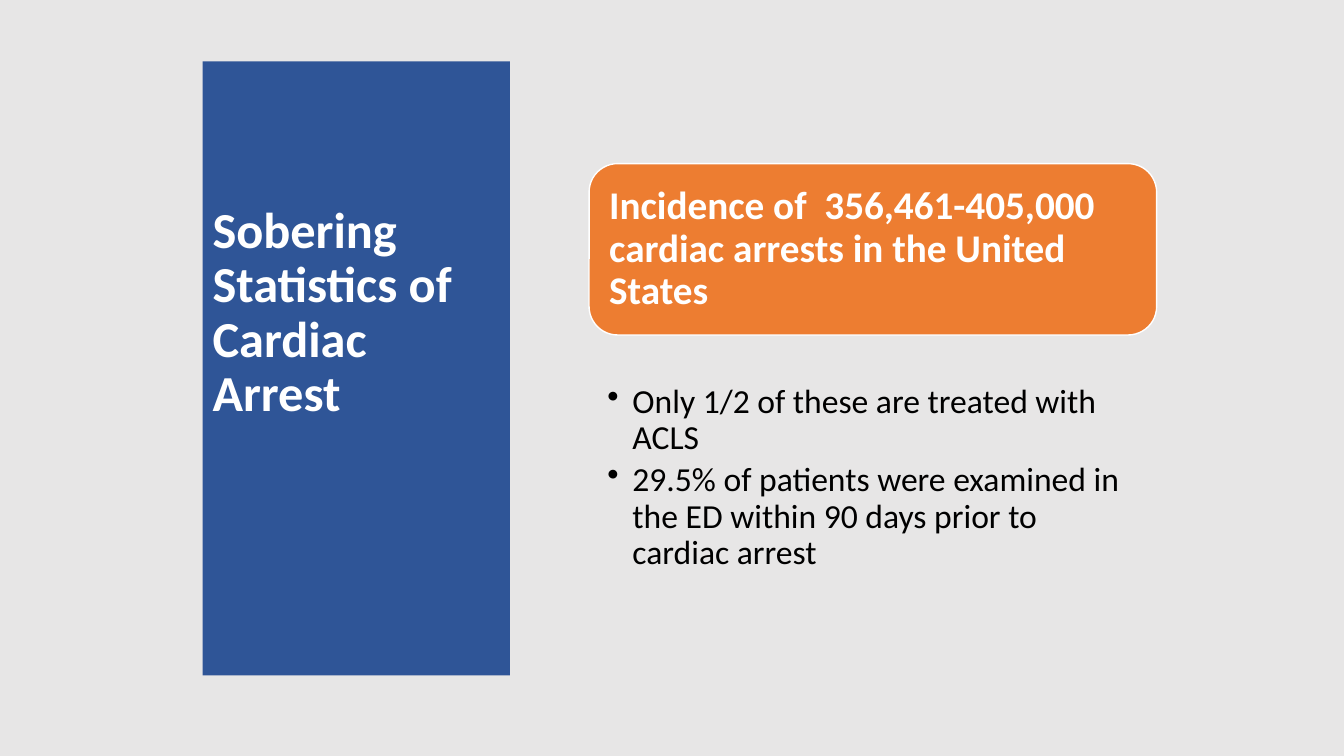
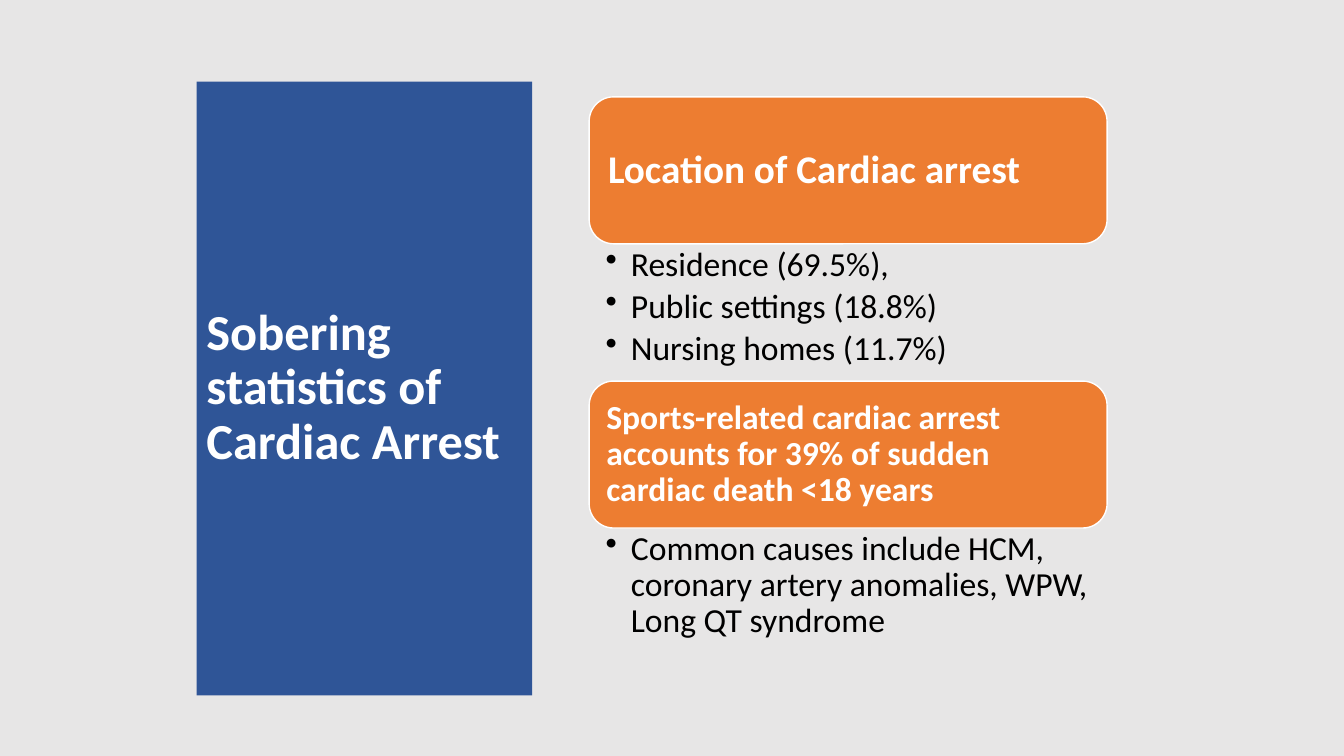
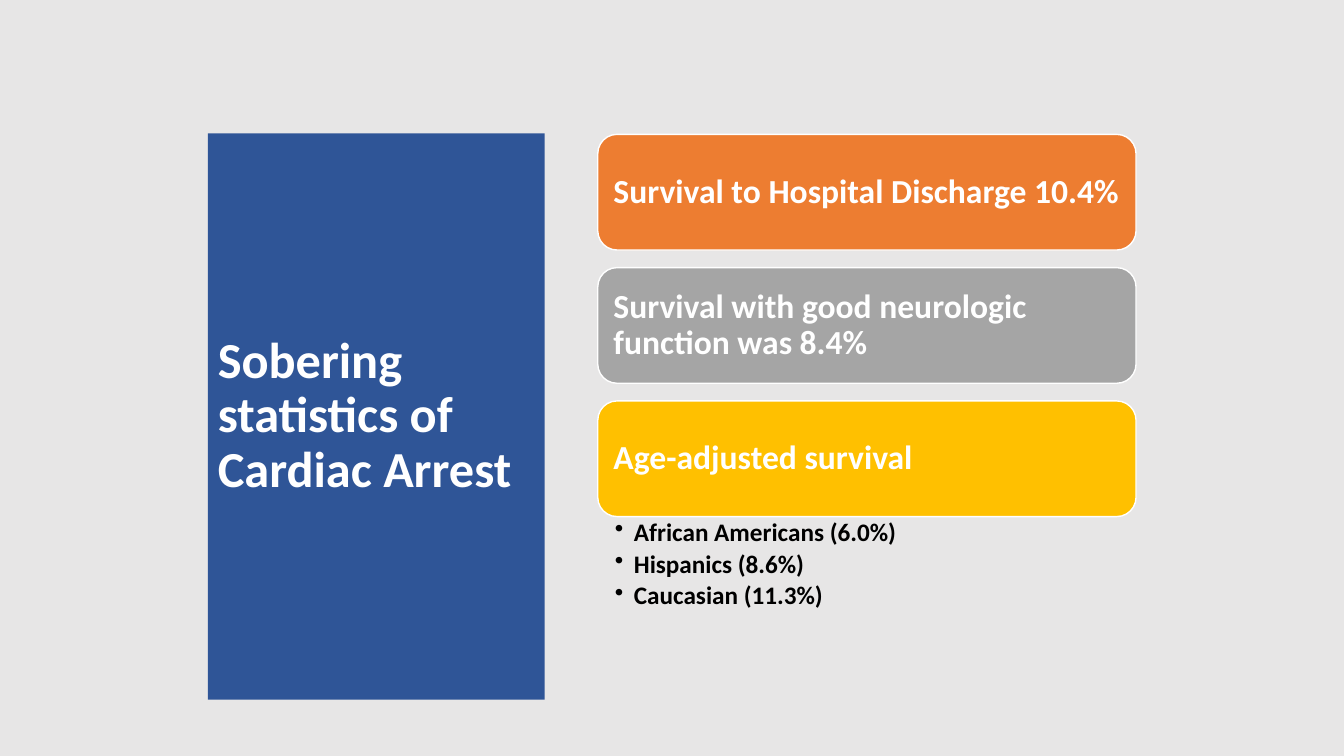
from dataclasses import dataclass
from typing import Any

from lxml.etree import SubElement
from pptx import Presentation
from pptx.dml.color import RGBColor
from pptx.enum.shapes import MSO_SHAPE as Preset
from pptx.enum.text import MSO_ANCHOR as Anchor, PP_ALIGN as Align
from pptx.oxml.ns import qn
from pptx.util import Pt

GROUND = RGBColor(0xE7, 0xE6, 0xE6)
BLUE = RGBColor(0x2F, 0x55, 0x97)
ORANGE = RGBColor(0xED, 0x7D, 0x31)
GRAY = RGBColor(0xA5, 0xA5, 0xA5)
GOLD = RGBColor(0xFF, 0xC0, 0x00)
WHITE = RGBColor(0xFF, 0xFF, 0xFF)
BLACK = RGBColor(0x00, 0x00, 0x00)

FONT = "Calibri"
TITLE_SIZE = 36
TITLE_INSETS = (7.2, 3.6, 7.2, 3.6)
BULLET_INSET = 2.2


@dataclass(frozen=True)
class Box:
    left: float
    top: float
    width: float
    height: float


@dataclass(frozen=True)
class TextStyle:
    size: float
    color: RGBColor
    bold: bool
    bulleted: bool = False


@dataclass(frozen=True)
class Bullets:
    lines: tuple[str, ...]
    height: float
    size: float = 24
    bold: bool = False
    lead: float = 0


@dataclass(frozen=True)
class Card:
    text: str
    color: RGBColor = ORANGE
    size: float = 24
    bullets: Bullets | None = None


@dataclass(frozen=True)
class StatisticsSlide:
    title: str
    title_box: Box
    first_card: Box
    cards: tuple[Card, ...]
    gap: float = 0
    title_lift: float = 0


SLIDES = (
    StatisticsSlide(
        "Sobering Statistics of Cardiac Arrest",
        Box(144.7, 43.9, 219.6, 438.5),
        Box(420.8, 116.9, 405.4, 122.4),
        (
            Card(
                "Incidence of  356,461-405,000 cardiac arrests in the United States",
                size=28,
                bullets=Bullets(
                    (
                        "Only 1/2 of these are treated with ACLS",
                        "29.5% of patients were examined in the ED within 90 days prior to cardiac arrest",
                    ),
                    height=175,
                    lead=33,
                ),
            ),
        ),
        title_lift=78,
    ),
    StatisticsSlide(
        "Sobering statistics of Cardiac Arrest",
        Box(140.4, 58.3, 239.8, 438.5),
        Box(420.8, 69.2, 370, 105),
        (
            Card(
                "Location of Cardiac arrest",
                size=28,
                bullets=Bullets(
                    (
                        "Residence (69.5%),",
                        "Public settings (18.8%)",
                        "Nursing homes (11.7%)",
                    ),
                    height=98,
                ),
            ),
            Card(
                "Sports-related cardiac arrest accounts for 39% of sudden cardiac death <18 years",
                bullets=Bullets(
                    (
                        "Common causes include HCM, coronary artery anomalies, WPW, Long QT syndrome",
                    ),
                    height=85,
                ),
            ),
        ),
    ),
    StatisticsSlide(
        "Sobering statistics of Cardiac Arrest",
        Box(148.5, 95.2, 240.5, 404.6),
        Box(427, 96, 384.5, 82.6),
        (
            Card("Survival to Hospital Discharge 10.4%"),
            Card("Survival with good neurologic function was 8.4%", GRAY),
            Card(
                "Age-adjusted survival",
                GOLD,
                bullets=Bullets(
                    (
                        "African Americans (6.0%)",
                        "Hispanics (8.6%)",
                        "Caucasian (11.3%)",
                    ),
                    height=72.7,
                    size=18,
                    bold=True,
                ),
            ),
        ),
        gap=12.6,
    ),
)


def apply(target: Any, values: dict[str, Any]) -> None:
    for name, value in values.items():
        setattr(target, name, value)


def place(box: Box) -> tuple[Pt, Pt, Pt, Pt]:
    return Pt(box.left), Pt(box.top), Pt(box.width), Pt(box.height)


def write_text(
    shape: Any,
    lines: tuple[str, ...],
    style: TextStyle,
    insets: tuple[float, float, float, float],
    anchor: Anchor,
) -> None:
    left, top, right, bottom = insets
    frame = shape.text_frame
    apply(frame, {
        "word_wrap": True,
        "vertical_anchor": anchor,
        "margin_left": Pt(left),
        "margin_top": Pt(top),
        "margin_right": Pt(right),
        "margin_bottom": Pt(bottom),
    })
    for index, line in enumerate(lines):
        paragraph = frame.paragraphs[0] if index == 0 else frame.add_paragraph()
        paragraph.add_run().text = line
        if style.bulleted:
            properties = paragraph._p.get_or_add_pPr()
            indent = Pt(0.75 * style.size)
            properties.set("marL", str(indent))
            properties.set("indent", str(-indent))
            SubElement(properties, qn("a:buChar"), char="•")
            paragraph.space_after = Pt(0.18 * style.size)
        apply(paragraph, {"alignment": Align.LEFT, "line_spacing": 0.9})
        for font in (paragraph.font, paragraph.runs[0].font):
            apply(font, {"name": FONT, "size": Pt(style.size), "bold": style.bold})
            font.color.rgb = style.color


def add_panel(slide: Any, preset: Preset, box: Box, color: RGBColor) -> Any:
    shape = slide.shapes.add_shape(preset, *place(box))
    shape.shadow.inherit = False
    shape.fill.solid()
    shape.fill.fore_color.rgb = color
    shape.line.fill.background()
    return shape


def add_title(slide: Any, content: StatisticsSlide) -> None:
    shape = add_panel(slide, Preset.RECTANGLE, content.title_box, BLUE)
    left, top, right, bottom = TITLE_INSETS
    write_text(
        shape,
        (content.title,),
        TextStyle(TITLE_SIZE, WHITE, True),
        (left, top, right, bottom + content.title_lift),
        Anchor.MIDDLE,
    )


def add_card(slide: Any, card: Card, box: Box) -> None:
    shape = add_panel(slide, Preset.ROUNDED_RECTANGLE, box, card.color)
    shape.line.color.rgb = WHITE
    shape.line.width = Pt(1)
    inset = 0.3 * card.size
    style = TextStyle(card.size, WHITE, True)
    write_text(shape, (card.text,), style, (inset,) * 4, Anchor.MIDDLE)


def add_bullets(slide: Any, bullets: Bullets, box: Box) -> None:
    shape = slide.shapes.add_textbox(*place(box))
    insets = (
        0.032 * box.width,
        BULLET_INSET + bullets.lead,
        0.56 * bullets.size,
        BULLET_INSET,
    )
    style = TextStyle(bullets.size, BLACK, bullets.bold, True)
    write_text(shape, bullets.lines, style, insets, Anchor.TOP)


def add_statistics_slide(presentation: Any, content: StatisticsSlide) -> None:
    slide = presentation.slides.add_slide(presentation.slide_layouts[6])
    slide.background.fill.solid()
    slide.background.fill.fore_color.rgb = GROUND
    add_title(slide, content)
    first = content.first_card
    top = first.top
    for card in content.cards:
        add_card(slide, card, Box(first.left, top, first.width, first.height))
        top += first.height
        if card.bullets:
            height = card.bullets.height
            add_bullets(slide, card.bullets, Box(first.left, top, first.width, height))
            top += height
        top += content.gap


def main() -> None:
    presentation = Presentation()
    apply(presentation, {"slide_width": Pt(960), "slide_height": Pt(540)})
    for content in SLIDES:
        add_statistics_slide(presentation, content)
    presentation.save("out.pptx")


if __name__ == "__main__":
    main()
